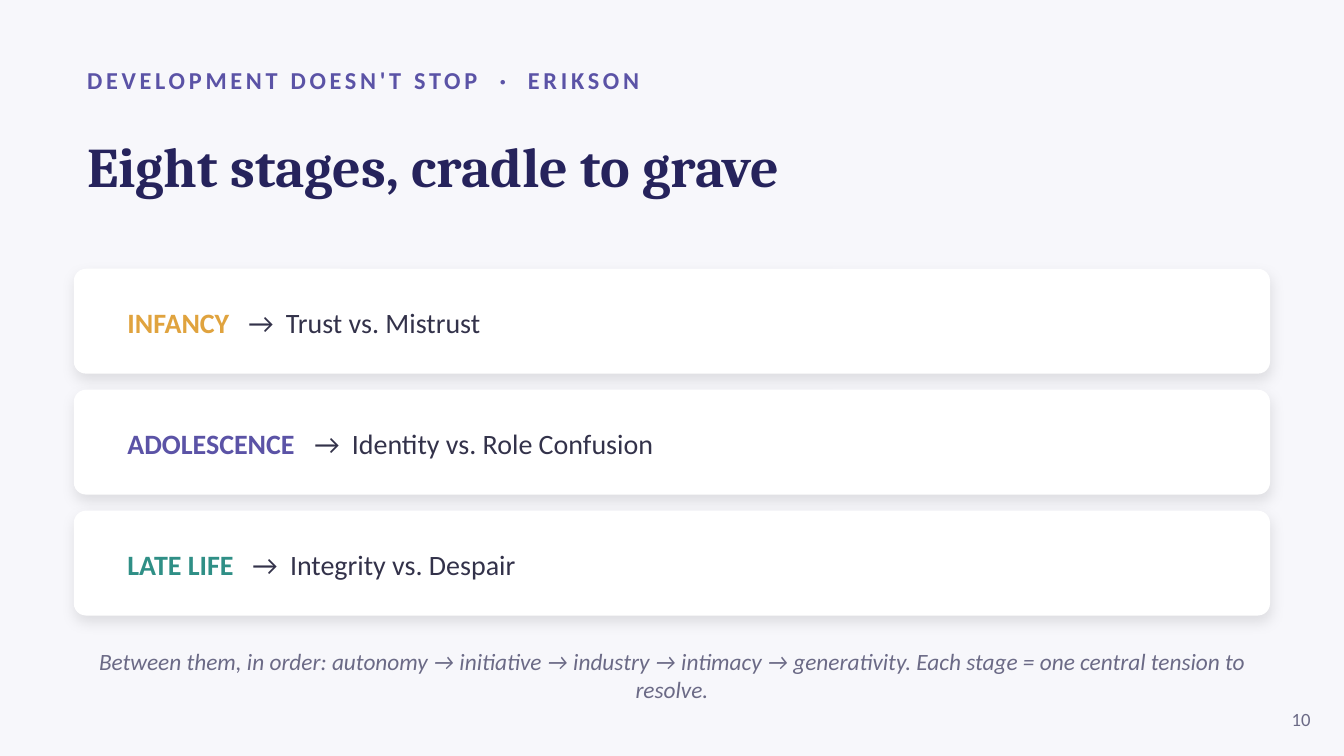
"""Build the slide on Erikson's eight stages of development."""
from lxml import etree
from pptx import Presentation
from pptx.dml.color import RGBColor
from pptx.enum.shapes import MSO_SHAPE
from pptx.enum.text import MSO_ANCHOR, MSO_AUTO_SIZE, PP_ALIGN
from pptx.oxml.ns import qn
from pptx.util import Inches, Pt

ROUNDED = MSO_SHAPE.ROUNDED_RECTANGLE
MIDDLE = MSO_ANCHOR.MIDDLE
NO_FIT = MSO_AUTO_SIZE.NONE
LEFT, CENTER, RIGHT = PP_ALIGN.LEFT, PP_ALIGN.CENTER, PP_ALIGN.RIGHT

BACKGROUND = RGBColor(0xF7, 0xF7, 0xFB)
WHITE = RGBColor(0xFF, 0xFF, 0xFF)
NAVY = RGBColor(0x26, 0x23, 0x5C)
PURPLE = RGBColor(0x5B, 0x53, 0xA6)
AMBER = RGBColor(0xE0, 0xA3, 0x3E)
TEAL = RGBColor(0x2F, 0x8F, 0x86)
INK = RGBColor(0x33, 0x32, 0x4A)
GREY = RGBColor(0x6B, 0x6A, 0x86)

EYEBROW = "DEVELOPMENT DOESN'T STOP\t·\tERIKSON"
EYEBROW_TABS = (3.07, 3.28)
TITLE = "Eight stages, cradle to grave"
STAGES = [
    ("INFANCY", "Trust vs. Mistrust", AMBER, 0.9),
    ("ADOLESCENCE", "Identity vs. Role Confusion", PURPLE, 1.39),
    ("LATE LIFE", "Integrity vs. Despair", TEAL, 0.93),
]
FOOTNOTE = ("Between them, in order: autonomy → initiative → industry → intimacy → "
            "generativity. Each stage = one central tension to resolve.")
PAGE = "10"

SLIDE_W = 10
SLIDE_H = SLIDE_W * 9 / 16
MARGIN, CARD_W, CARD_H = 0.55, 8.9, 0.78
CARD_TOP, CARD_STEP = 2, 0.9
LABEL_INSET, LABEL_DROP, LABEL_H = 0.3, 0.15, 0.5
ARROW_W = 0.28


def style(r, size, color, name="Calibri", bold=False, italic=False):
    f = r.font
    f.size, f.name, f.bold, f.italic = Pt(size), name, bold, italic
    f.color.rgb = color


def write(sp, text, align=LEFT, tabs=()):
    tf = sp.text_frame
    tf.word_wrap = True
    tf.auto_size = NO_FIT
    tf.vertical_anchor = MIDDLE
    tf.text = text
    p = tf.paragraphs[0]
    p.alignment = align
    if tabs:
        tab_list = etree.SubElement(p._p.get_or_add_pPr(), qn("a:tabLst"))
        for stop in tabs:
            etree.SubElement(tab_list, qn("a:tab"), pos=str(Inches(stop)), algn="l")
    return p


def add_text(s, box, text, align=LEFT, tabs=()):
    return write(s.shapes.add_textbox(*map(Inches, box)), text, align, tabs)


def add_card(s, top):
    card = s.shapes.add_shape(ROUNDED, *map(Inches, (MARGIN, top, CARD_W, CARD_H)))
    card.adjustments[0] = 0.115
    card.fill.solid()
    card.fill.fore_color.rgb = WHITE
    card.line.fill.background()
    card.shadow.inherit = False
    effects = card._element.spPr.find(qn("a:effectLst"))
    shadow = etree.SubElement(effects, qn("a:outerShdw"), blurRad=str(Pt(7)),
                              dist=str(Pt(3)), dir="5400000", algn="bl", rotWithShape="0")
    color = etree.SubElement(shadow, qn("a:srgbClr"), val="000000")
    etree.SubElement(color, qn("a:alpha"), val="10000")


def add_stage(s, top, label, tension, color, arrow_at):
    add_card(s, top)
    box = (MARGIN + LABEL_INSET, top + LABEL_DROP, CARD_W - 2 * LABEL_INSET, LABEL_H)
    p = add_text(s, box, label, tabs=(arrow_at, arrow_at + ARROW_W))
    style(p.runs[0], 15, color, bold=True)
    r = p.add_run()
    r.text = f"\t→\t{tension}"
    style(r, 15, INK)


def main():
    prs = Presentation()
    prs.slide_width, prs.slide_height = Inches(SLIDE_W), Inches(SLIDE_H)
    s = prs.slides.add_slide(prs.slide_layouts[5])
    s.background.fill.solid()
    s.background.fill.fore_color.rgb = BACKGROUND

    p = add_text(s, (MARGIN, 0.42, 9, 0.35), EYEBROW, tabs=EYEBROW_TABS)
    style(p.runs[0], 13, PURPLE, bold=True)
    p.runs[0].font._element.set("spc", "200")

    title = s.shapes.title
    title.left, title.top, title.width, title.height = map(
        Inches, (MARGIN, 0.78, CARD_W, 0.9))
    style(write(title, TITLE).runs[0], 30, NAVY, "Cambria", bold=True)

    for i, stage in enumerate(STAGES):
        add_stage(s, CARD_TOP + i * CARD_STEP, *stage)

    p = add_text(s, (MARGIN, 4.75, CARD_W, 0.55), FOOTNOTE, CENTER)
    style(p.runs[0], 12.5, GREY, italic=True)
    p = add_text(s, (9.35, 5.2, 0.5, 0.3), PAGE, RIGHT)
    style(p.runs[0], 10, GREY)

    prs.save("out.pptx")


if __name__ == "__main__":
    main()
